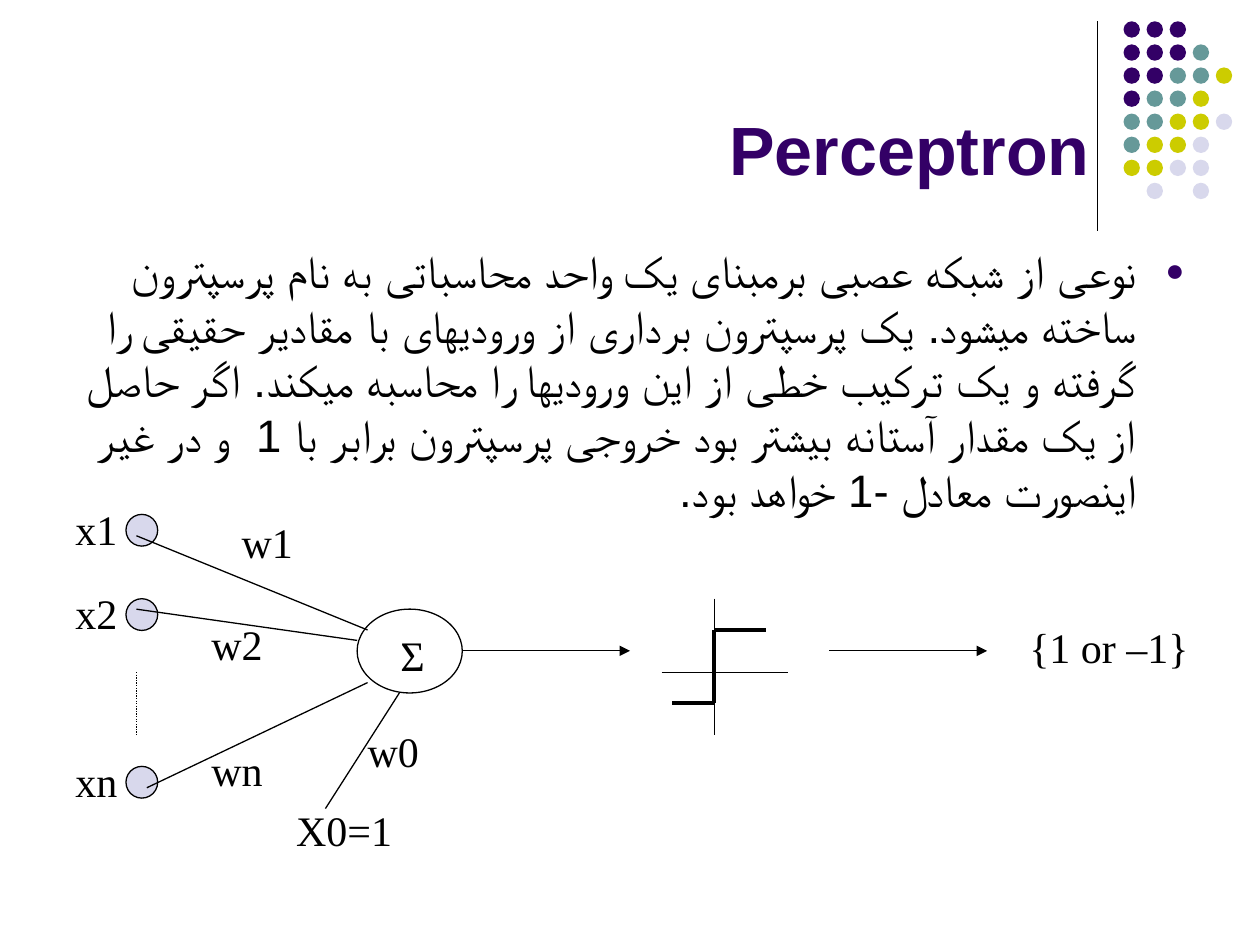
from dataclasses import dataclass

from pptx import Presentation
from pptx.dml.color import RGBColor
from pptx.enum.dml import MSO_LINE
from pptx.enum.shapes import MSO_CONNECTOR, MSO_SHAPE
from pptx.enum.text import MSO_ANCHOR, MSO_AUTO_SIZE, PP_ALIGN
from pptx.oxml.ns import qn
from pptx.util import Cm, Pt
from lxml.etree import SubElement


@dataclass(frozen=True)
class Theme:
    purple: str = "330066"
    teal: str = "669999"
    olive: str = "CCCC00"
    lavender: str = "D8D8EC"
    ink: str = "000000"
    sans: str = "Arial"
    serif: str = "Times New Roman"
    title_size: float = 39
    body_size: float = 26
    label_size: float = 24
    thin: float = 0.75
    thick: float = 2.25


def apply(target, values):
    for name, value in values.items():
        setattr(target, name, value)


def add_node(parent, tag, **attributes):
    return SubElement(parent, qn(tag), attributes)


class SlideBuilder:
    def __init__(self, page, theme):
        self.page = page
        self.theme = theme

    def add_span(self, para, text, size, font, color, bold=False):
        span = para.add_run()
        span.text = text
        apply(span.font, {"size": Pt(size), "name": font, "bold": bold})
        span.font.color.rgb = RGBColor.from_string(color)
        add_node(span.font._element, "a:cs", typeface=font)

    def right_to_left(self, para):
        para.alignment = PP_ALIGN.RIGHT
        properties = para._p.get_or_add_pPr()
        properties.set("rtl", "1")
        return properties

    def title(self, text, left, top, width, height):
        box = self.page.shapes.title
        apply(box, {"left": Cm(left), "top": Cm(top),
                    "width": Cm(width), "height": Cm(height)})
        apply(box.text_frame, {"vertical_anchor": MSO_ANCHOR.BOTTOM,
                               "auto_size": MSO_AUTO_SIZE.NONE, "word_wrap": True})
        para = box.text_frame.paragraphs[0]
        self.right_to_left(para)
        self.add_span(para, text, self.theme.title_size, self.theme.sans,
                      self.theme.purple, True)

    def bullet(self, text, left, top, width, height):
        box = self.page.shapes.add_textbox(Cm(left), Cm(top), Cm(width), Cm(height))
        box.text_frame.word_wrap = True
        para = box.text_frame.paragraphs[0]
        para.space_before = Pt(0.2 * self.theme.body_size)
        properties = self.right_to_left(para)
        indents = {"marL": Cm(0.95), "marR": Cm(0), "indent": Cm(-0.95)}
        for name, value in indents.items():
            properties.set(name, str(value))
        color = add_node(properties, "a:buClr")
        add_node(color, "a:srgbClr", val=self.theme.purple)
        add_node(properties, "a:buSzPct", val="70000")
        add_node(properties, "a:buFont", typeface=self.theme.sans)
        add_node(properties, "a:buChar", char="●")
        self.add_span(para, text, self.theme.body_size, self.theme.sans, self.theme.ink)

    def label(self, text, left, top, width):
        box = self.page.shapes.add_textbox(Cm(left), Cm(top), Cm(width), Cm(1.27))
        apply(box.text_frame, {"word_wrap": False,
                               "auto_size": MSO_AUTO_SIZE.SHAPE_TO_FIT_TEXT})
        self.add_span(box.text_frame.paragraphs[0], text, self.theme.label_size,
                      self.theme.serif, self.theme.ink)

    def ellipse(self, left, top, width, height, fill=None, outlined=True):
        shape = self.page.shapes.add_shape(
            MSO_SHAPE.OVAL, Cm(left), Cm(top), Cm(width), Cm(height))
        shape.shadow.inherit = False
        if fill:
            shape.fill.solid()
            shape.fill.fore_color.rgb = RGBColor.from_string(fill)
        else:
            shape.fill.background()
        if outlined:
            shape.line.color.rgb = RGBColor.from_string(self.theme.ink)
            shape.line.width = Pt(self.theme.thin)
        else:
            shape.line.fill.background()

    def line(self, start, end, weight=None, dash=None, arrow=False):
        connector = self.page.shapes.add_connector(
            MSO_CONNECTOR.STRAIGHT, *(Cm(value) for value in (*start, *end)))
        connector.line.color.rgb = RGBColor.from_string(self.theme.ink)
        apply(connector.line, {"width": Pt(weight or self.theme.thin),
                               "dash_style": dash})
        if arrow:
            add_node(connector.line._get_or_add_ln(), "a:tailEnd", type="triangle")
        add_node(connector._element.spPr, "a:effectLst")


def draw_dots(builder):
    theme = builder.theme
    colors = {"P": theme.purple, "T": theme.teal,
              "Y": theme.olive, "L": theme.lavender}
    rows = ("PPP", "PPPT", "PPTTY", "PTTY", "TTYYL", "TYYL", "YYLL", ".L.L")
    pitch = 0.465
    for row, codes in enumerate(rows):
        for column, code in enumerate(codes):
            if code in colors:
                builder.ellipse(22.65 + column * pitch, 0.43 + row * pitch,
                                0.33, 0.33, colors[code], False)


def draw_neuron(builder):
    for name, top in (("x1", 10.37), ("x2", 12.07), ("xn", 15.45)):
        builder.ellipse(2.54, top, 0.64, 0.64, builder.theme.lavender)
        builder.label(name, 1.27, top - 0.35, 1.35)
    builder.line((2.75, 13.55), (2.75, 14.82), dash=MSO_LINE.ROUND_DOT)
    builder.ellipse(7.2, 12.28, 2.12, 1.69)
    builder.label("Σ", 7.82, 12.57, 1.02)

    weights = (
        ("w1", 4.62, 10.29, (2.75, 10.8), (7.41, 12.7)),
        ("w2", 4.01, 12.34, (2.75, 12.28), (7.2, 12.91)),
        ("wn", 4.01, 14.88, (2.96, 15.88), (7.41, 13.76)),
        ("w0", 7.16, 14.5, (6.56, 16.3), (8.05, 13.97)),
    )
    for name, left, top, start, end in weights:
        builder.line(start, end)
        builder.label(name, left, top, 1.55)
    builder.label("X0=1", 5.72, 16.1, 2.44)


def draw_output(builder):
    axis, middle, low, high = 14.4, 13.55, 14.18, 12.7
    builder.line((axis, 12.07), (axis, 14.82))
    builder.line((13.34, middle), (15.88, middle))
    step = ((13.55, low), (axis, low), (axis, high), (15.45, high))
    for start, end in zip(step, step[1:]):
        builder.line(start, end, builder.theme.thick)
    for left, right in ((9.31, 12.7), (16.72, 19.9)):
        builder.line((left, 13.12), (right, 13.12), arrow=True)
    builder.label("{1 or –1}", 20.5, 12.4, 3.73)


def main():
    deck = Presentation()
    apply(deck, {"slide_width": Cm(25.4), "slide_height": Cm(19.05)})
    page = deck.slides.add_slide(deck.slide_layouts.get_by_name("Title Only"))
    builder = SlideBuilder(page, Theme())
    builder.line((22.12, 0.43), (22.12, 4.65))
    draw_dots(builder)
    builder.title("Perceptron", 1.27, 0.33, 20.95, 3.61)
    builder.bullet(
        "نوعی از شبکه عصبی برمبنای یک واحد محاسباتی به نام پرسپترون ساخته میشود. "
        "یک پرسپترون برداری از ورودیهای با مقادیر حقیقی را گرفته و یک ترکیب خطی "
        "از این ورودیها را محاسبه میکند. اگر حاصل از یک مقدار آستانه بیشتر بود "
        "خروجی پرسپترون برابر با 1  و در غیر اینصورت معادل -1 خواهد بود.",
        1.27, 4.78, 22.86, 12.24)
    draw_neuron(builder)
    draw_output(builder)
    deck.save("out.pptx")


if __name__ == "__main__":
    main()
